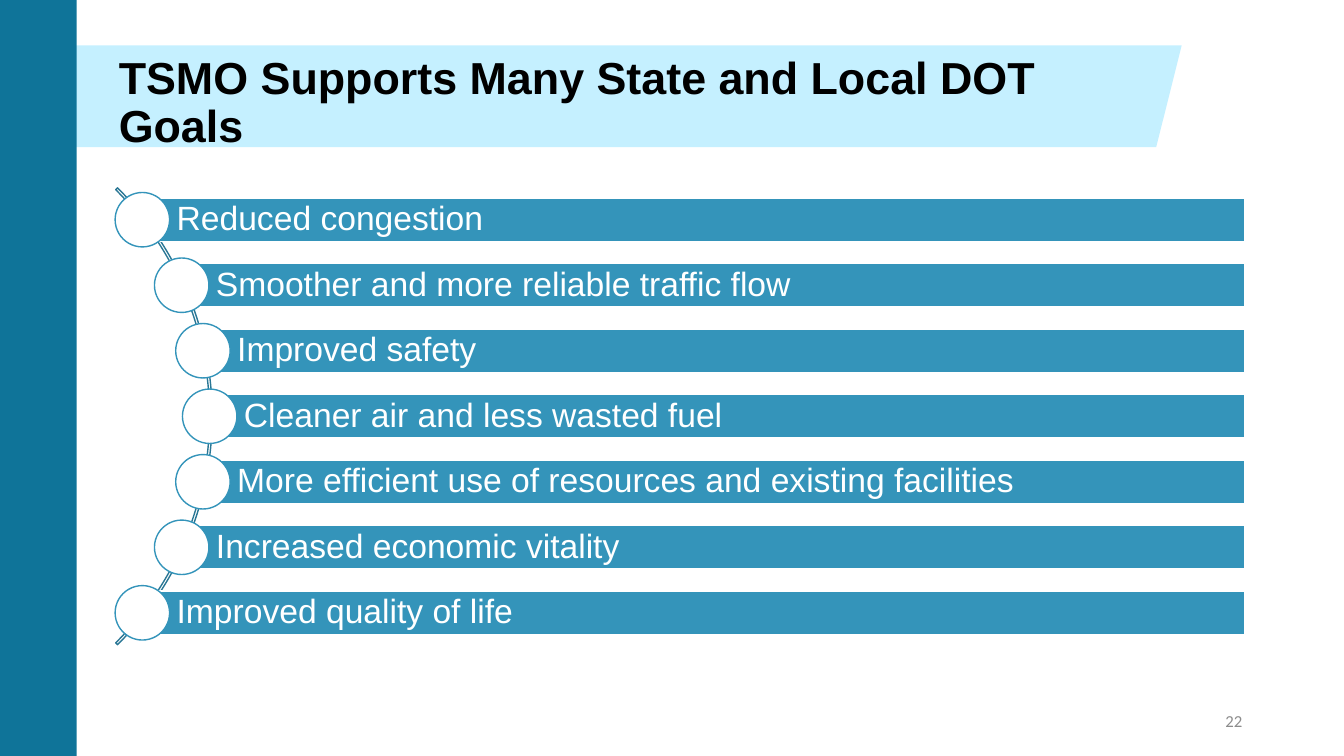
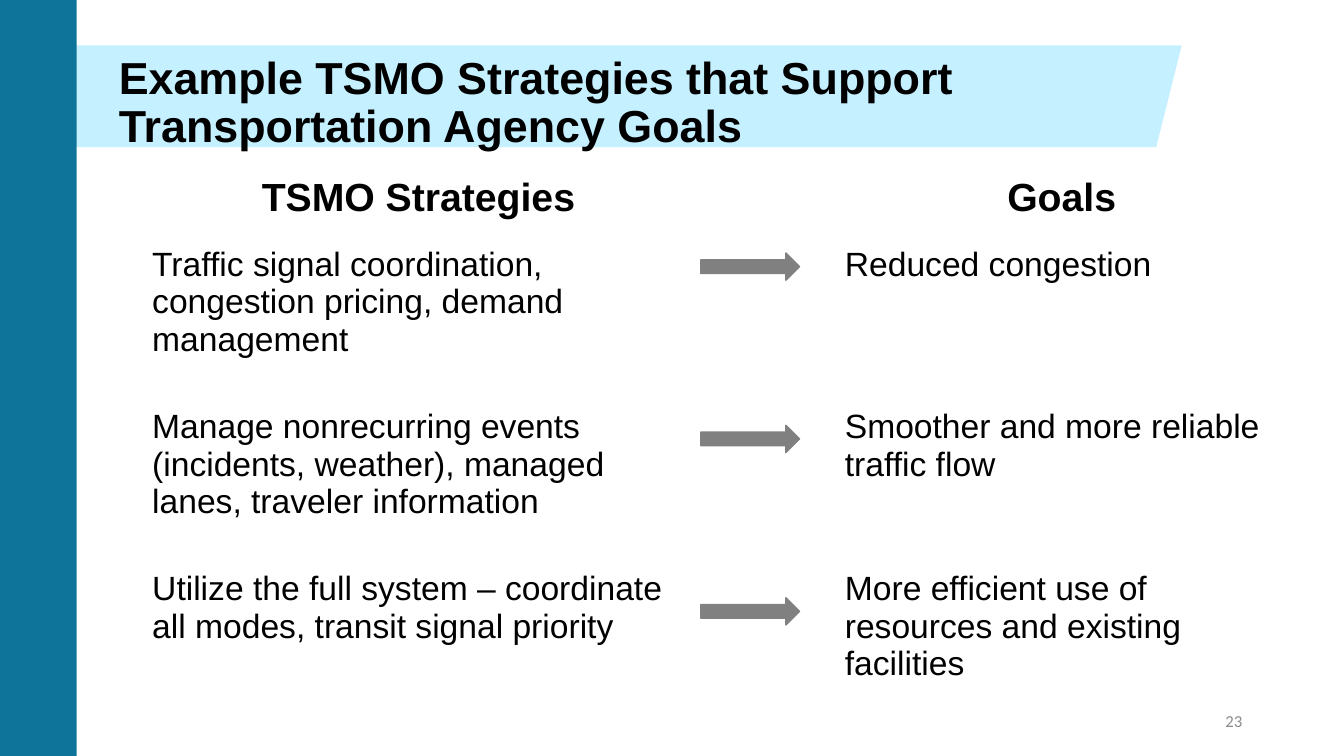
from dataclasses import dataclass
from math import sqrt

from pptx import Presentation
from pptx import util as u
from pptx.dml.color import RGBColor
from pptx.enum import shapes, text

COLORS = {
    "sidebar": "0F7499",
    "band": "C5F0FF",
    "bar": "3494BA",
    "arc": "2A7795",
    "arrow": "808080",
    "number": "8C8C8C",
    "black": "000000",
    "white": "FFFFFF",
}
GOALS = [
    "Reduced congestion",
    "Smoother and more reliable traffic flow",
    "Improved safety",
    "Cleaner air and less wasted fuel",
    "More efficient use of resources and existing facilities",
    "Increased economic vitality",
    "Improved quality of life",
]


@dataclass(frozen=True)
class Style:
    """Look of a piece of text."""

    size: float
    color: str = "black"
    bold: bool = False
    font: str = "Arial"
    align: text.PP_ALIGN = text.PP_ALIGN.LEFT
    spacing: float = 1.0


@dataclass(frozen=True)
class Box:
    """Place of an object in inches."""

    left: float
    top: float
    width: float
    height: float

    def lengths(self) -> list[u.Length]:
        """Return the place as lengths."""
        return [u.Inches(n) for n in (self.left, self.top, self.width, self.height)]


@dataclass(frozen=True)
class Strategy:
    """A strategy and the goal it supports."""

    action: str
    goal: str


TITLE = Style(32, bold=True, spacing=0.9)
BAR_TEXT = Style(24, "white", spacing=0.9)
NUMBER = Style(12, "number", font="Calibri", align=text.PP_ALIGN.RIGHT)
HEADING = Style(28, bold=True, align=text.PP_ALIGN.CENTER)
BODY = Style(24)

STRATEGIES = [
    Strategy("Traffic signal coordination, congestion pricing, demand management", GOALS[0]),
    Strategy(
        "Manage nonrecurring events (incidents, weather), managed lanes, traveler information",
        GOALS[1],
    ),
    Strategy("Utilize the full system – coordinate all modes, transit signal priority", GOALS[4]),
]


def rgb(name: str) -> RGBColor:
    """Look up a named colour."""
    return RGBColor.from_string(COLORS[name])


def write(frame, words: str, style: Style) -> None:
    """Put one styled paragraph in a text frame."""
    frame.text = words
    para = frame.paragraphs[0]
    para.alignment = style.align
    para.line_spacing = style.spacing
    for span in para.runs:
        span.font.name = style.font
        span.font.size = u.Pt(style.size)
        span.font.bold = style.bold
        span.font.color.rgb = rgb(style.color)


def add_shape(page, kind, box: Box, fill: str | None, line: str | None = None):
    """Draw a preset shape with a flat fill and an optional outline."""
    shape = page.shapes.add_shape(kind, *box.lengths())
    shape.shadow.inherit = False
    if fill:
        shape.fill.solid()
        shape.fill.fore_color.rgb = rgb(fill)
    else:
        shape.fill.background()
    if line:
        shape.line.color.rgb = rgb(line)
        shape.line.width = u.Pt(1)
    else:
        shape.line.fill.background()
    return shape


def add_text(page, box: Box, words: str, style: Style, anchor=text.MSO_ANCHOR.TOP) -> None:
    """Draw a wrapping text box."""
    frame = page.shapes.add_textbox(*box.lengths()).text_frame
    frame.word_wrap = True
    frame.vertical_anchor = anchor
    write(frame, words, style)


def add_page(deck, title: str, number: int):
    """Add a slide with the shared bands, title and number."""
    page = deck.slides.add_slide(deck.slide_layouts[6])
    add_shape(page, shapes.MSO_SHAPE.PARALLELOGRAM, Box(0.24, 0.45, 11.48, 1.01), "band")
    add_shape(page, shapes.MSO_SHAPE.RECTANGLE, Box(0, 0, 0.76, 7.5), "sidebar")
    add_text(page, Box(1.08, 0.5, 9.84, 1.03), title, TITLE)
    add_text(page, Box(9.42, 6.95, 3, 0.4), str(number), NUMBER, text.MSO_ANCHOR.MIDDLE)
    return page


def add_goal_arc(page, goals: list[str]) -> None:
    """Draw the goals as bars whose dots sit on a circular arc."""
    center_x, center_y, radius = -1.1, 4.13, 3.18
    arc_size, bar_height, dot_size, step, right = 6.41, 0.43, 0.54, 0.65, 12.35
    arc_box = Box(center_x - arc_size / 2, center_y - arc_size / 2, arc_size, arc_size)
    arc = add_shape(page, shapes.MSO_SHAPE.BLOCK_ARC, arc_box, None, "arc")
    for index, value in enumerate((189, 27, 0.004)):
        arc.adjustments[index] = value

    for index, goal in enumerate(goals):
        offset = (index - (len(goals) - 1) / 2) * step
        x, y = center_x + sqrt(radius**2 - offset**2), center_y + offset
        bar_box = Box(x, y - bar_height / 2, right - x, bar_height)
        bar = add_shape(page, shapes.MSO_SHAPE.RECTANGLE, bar_box, "bar", "white")
        frame = bar.text_frame
        frame.word_wrap = True
        frame.vertical_anchor = text.MSO_ANCHOR.MIDDLE
        frame.margin_left = u.Inches(0.34)
        frame.margin_top = frame.margin_right = frame.margin_bottom = u.Inches(0.07)
        write(frame, goal, BAR_TEXT)
        dot_box = Box(x - dot_size / 2, y - dot_size / 2, dot_size, dot_size)
        add_shape(page, shapes.MSO_SHAPE.OVAL, dot_box, "white", "bar")


def add_strategy_table(page, strategies: list[Strategy]) -> None:
    """Draw the table of strategies and goals with an arrow in each row."""
    widths = [5.48, 1.39, 4.5]
    heights = [0.86] + [1.61] * len(strategies)
    box = Box(1.41, 1.53, sum(widths), sum(heights))
    table = page.shapes.add_table(len(heights), len(widths), *box.lengths()).table
    table.horz_banding = False
    for column, width in zip(table.columns, widths):
        column.width = u.Inches(width)
    for row, height in zip(table.rows, heights):
        row.height = u.Inches(height)
    for cell in table.iter_cells():
        cell.fill.background()

    rows = [("TSMO Strategies", "Goals")] + [(item.action, item.goal) for item in strategies]
    for index, pair in enumerate(rows):
        for column, words in zip((0, 2), pair):
            cell = table.cell(index, column)
            write(cell.text_frame, words, BODY if index else HEADING)
            cell.vertical_anchor = text.MSO_ANCHOR.TOP if index else text.MSO_ANCHOR.MIDDLE

    for index in range(len(strategies)):
        arrow_box = Box(6.95, 2.51 + 1.71 * index, 0.98, 0.27)
        add_shape(page, shapes.MSO_SHAPE.RIGHT_ARROW, arrow_box, "arrow", "arrow")


def main() -> None:
    """Build and save the deck."""
    deck = Presentation()
    deck.slide_width, deck.slide_height = u.Inches(13.33), u.Inches(7.5)
    add_goal_arc(add_page(deck, "TSMO Supports Many State and Local DOT Goals", 22), GOALS)
    title = "Example TSMO Strategies that Support Transportation Agency Goals"
    add_strategy_table(add_page(deck, title, 23), STRATEGIES)
    deck.save("out.pptx")


if __name__ == "__main__":
    main()
